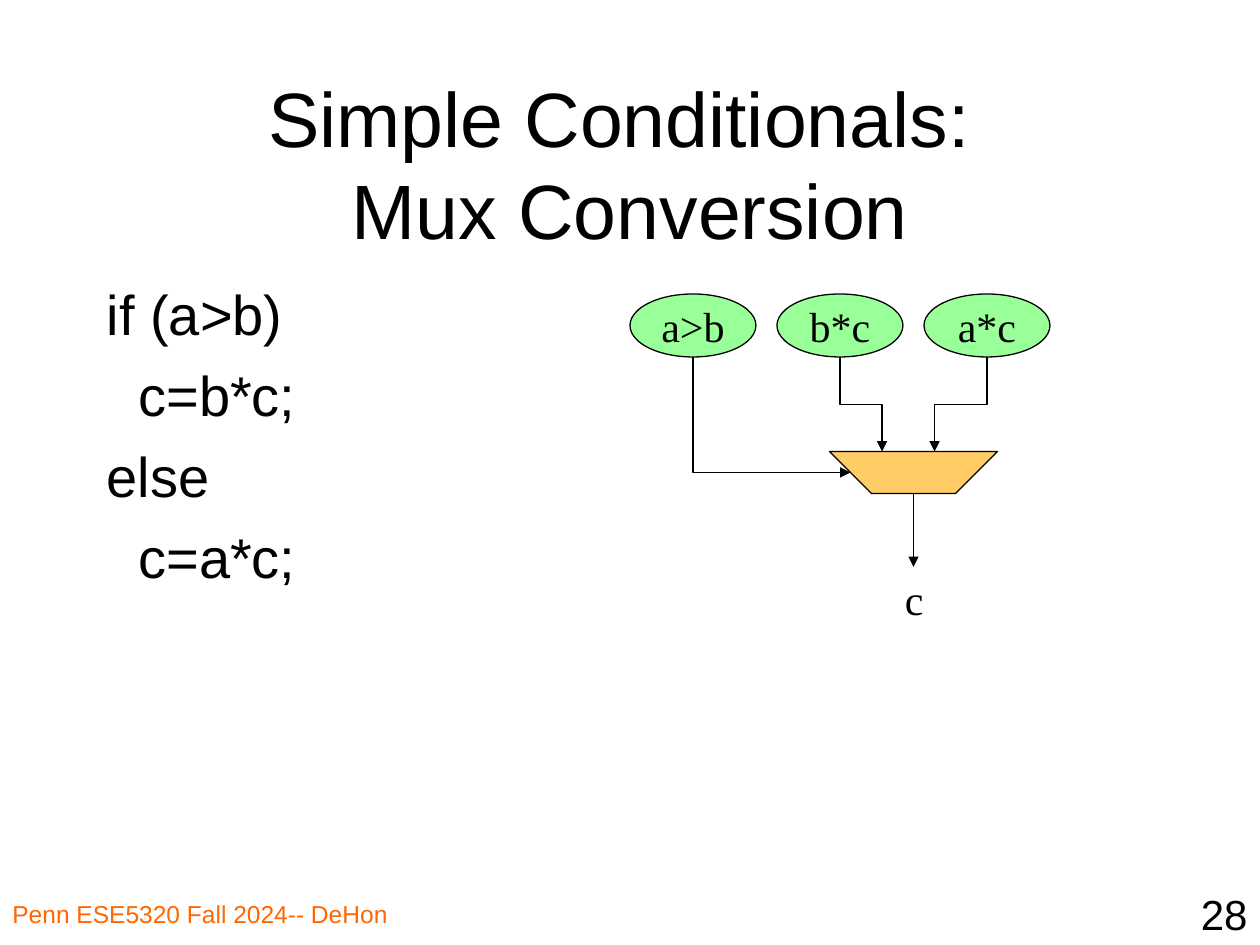
from lxml import etree
from pptx import Presentation
from pptx.dml.color import RGBColor
from pptx.enum.shapes import MSO_CONNECTOR, MSO_SHAPE
from pptx.enum.text import MSO_ANCHOR, MSO_AUTO_SIZE, PP_ALIGN
from pptx.oxml.ns import qn
from pptx.util import Inches, Pt

STRAIGHT, ELBOW = MSO_CONNECTOR.STRAIGHT, MSO_CONNECTOR.ELBOW
OVAL = MSO_SHAPE.OVAL
MIDDLE = MSO_ANCHOR.MIDDLE
FIXED = MSO_AUTO_SIZE.NONE
LEFT, CENTER, RIGHT = PP_ALIGN.LEFT, PP_ALIGN.CENTER, PP_ALIGN.RIGHT

COLUMNS, ROWS = 120, 90
CELL = Inches(10) // COLUMNS
BLACK, ORANGE, GREEN, AMBER = "000000", "FF6600", "99FF99", "FFCC66"
SANS, SERIF = "Arial", "Times New Roman"


def grid(*cells):
    """Turn grid columns and rows into slide lengths."""
    return [round(cell * CELL) for cell in cells]


def color(hex_string):
    return RGBColor.from_string(hex_string)


def style_text(paragraph, size, font=SANS, hex_color=BLACK, align=LEFT):
    paragraph.font.size = Pt(size)
    paragraph.font.name = font
    paragraph.font.color.rgb = color(hex_color)
    paragraph.alignment = align


def style_line(line):
    line.color.rgb = color(BLACK)
    line.width = Pt(0.75)


def style_shape(shape, fill):
    shape.shadow.inherit = False
    shape.fill.solid()
    shape.fill.fore_color.rgb = color(fill)
    style_line(shape.line)


def add_text(slide, box, text, size, wrap=True, **style):
    shape = slide.shapes.add_textbox(*grid(*box))
    shape.text_frame.word_wrap = wrap
    shape.text_frame.text = text
    for paragraph in shape.text_frame.paragraphs:
        style_text(paragraph, size, **style)
    return shape


def style_arrow(connector):
    style_line(connector.line)
    properties = connector._element.spPr
    etree.SubElement(properties.find(qn("a:ln")), qn("a:tailEnd"), type="triangle")
    etree.SubElement(properties, qn("a:effectLst"))


def add_elbow_down(slide, start, end, preset):
    """Draw a bent arrow that leaves its start downwards."""
    (x1, y1), (x2, y2) = start, end
    width, height = y2 - y1, abs(x2 - x1)
    left, top = (x1 + x2 - width) / 2, (y1 + y2 - height) / 2
    connector = slide.shapes.add_connector(
        ELBOW, *grid(left, top, left + width, top + height))
    properties = connector._element.spPr
    properties.find(qn("a:prstGeom")).set("prst", preset)
    transform = properties.find(qn("a:xfrm"))
    if x2 > x1:
        transform.set("rot", str(270 * 60000))
        transform.set("flipH", "1")
    else:
        transform.set("rot", str(90 * 60000))
    style_arrow(connector)


def add_title(slide, box, text):
    title = slide.shapes.title
    title.left, title.top, title.width, title.height = grid(*box)
    frame = title.text_frame
    frame.text = text
    frame.auto_size = FIXED
    frame.vertical_anchor = MIDDLE
    style_text(frame.paragraphs[0], 44, align=CENTER)


def add_code(slide, box, lines):
    """Place code lines, given as (indent level, text)."""
    shape = add_text(slide, box, "\n".join(text for _, text in lines), 32)
    for paragraph, (level, _) in zip(shape.text_frame.paragraphs, lines):
        paragraph.space_before = Pt(8)
        paragraph._p.get_or_add_pPr().set("marL", str(Inches(0.25) * level))


def add_mux_diagram(slide, left, top):
    """Draw three inputs that feed a multiplexer with one output."""
    oval_width, oval_height, pitch = 12, 6, 14
    starts = []
    for index, text in enumerate(["a>b", "b*c", "a*c"]):
        x = left + index * pitch
        oval = slide.shapes.add_shape(OVAL, *grid(x, top, oval_width, oval_height))
        style_shape(oval, GREEN)
        frame = oval.text_frame
        frame.text = text
        frame.word_wrap = False
        frame.vertical_anchor = MIDDLE
        style_text(frame.paragraphs[0], 24, SERIF, align=CENTER)
        starts.append((x + oval_width / 2, top + oval_height))

    mux_left, mux_top, mux_width, mux_height = left + 19, top + 15, 16, 4
    mux_right, mux_bottom = mux_left + mux_width, mux_top + mux_height
    builder = slide.shapes.build_freeform(*grid(mux_left, mux_top))
    builder.add_line_segments([
        grid(mux_left + mux_height, mux_bottom),
        grid(mux_right - mux_height, mux_bottom),
        grid(mux_right, mux_top),
    ], close=True)
    style_shape(builder.convert_to_shape(), AMBER)

    ends = [(mux_left + 2, mux_top + 2), (mux_left + 5, mux_top), (mux_left + 10, mux_top)]
    presets = ["bentConnector2", "bentConnector3", "bentConnector3"]
    for start, end, preset in zip(starts, ends, presets):
        add_elbow_down(slide, start, end, preset)

    middle, label_top = mux_left + mux_width / 2, mux_bottom + 7
    label = add_text(slide, (middle - 2, label_top, 4, 6), "c", 24,
                     wrap=False, font=SERIF, align=CENTER)
    output = slide.shapes.add_connector(
        STRAIGHT, *grid(middle, mux_bottom, middle, label_top))
    output.end_connect(label, 0)
    style_arrow(output)


def add_footer(slide, text, number):
    add_text(slide, (0, ROWS - 5, 46, 5), text, 14, hex_color=ORANGE)
    add_text(slide, (COLUMNS - 25, ROWS - 6, 25, 6), number, 24, align=RIGHT)


def main():
    presentation = Presentation()
    presentation.slide_width, presentation.slide_height = grid(COLUMNS, ROWS)
    slide = presentation.slides.add_slide(presentation.slide_layouts[5])
    add_footer(slide, "Penn ESE5320 Fall 2024-- DeHon", "28")
    add_title(slide, (9, 8, 102, 15), "Simple Conditionals: \vMux Conversion")
    add_code(slide, (9, 26, 102, 54),
             [(0, "if (a>b)"), (1, "c=b*c;"), (0, "else"), (1, "c=a*c;")])
    add_mux_diagram(slide, 60, 28)
    presentation.save("out.pptx")


if __name__ == "__main__":
    main()
